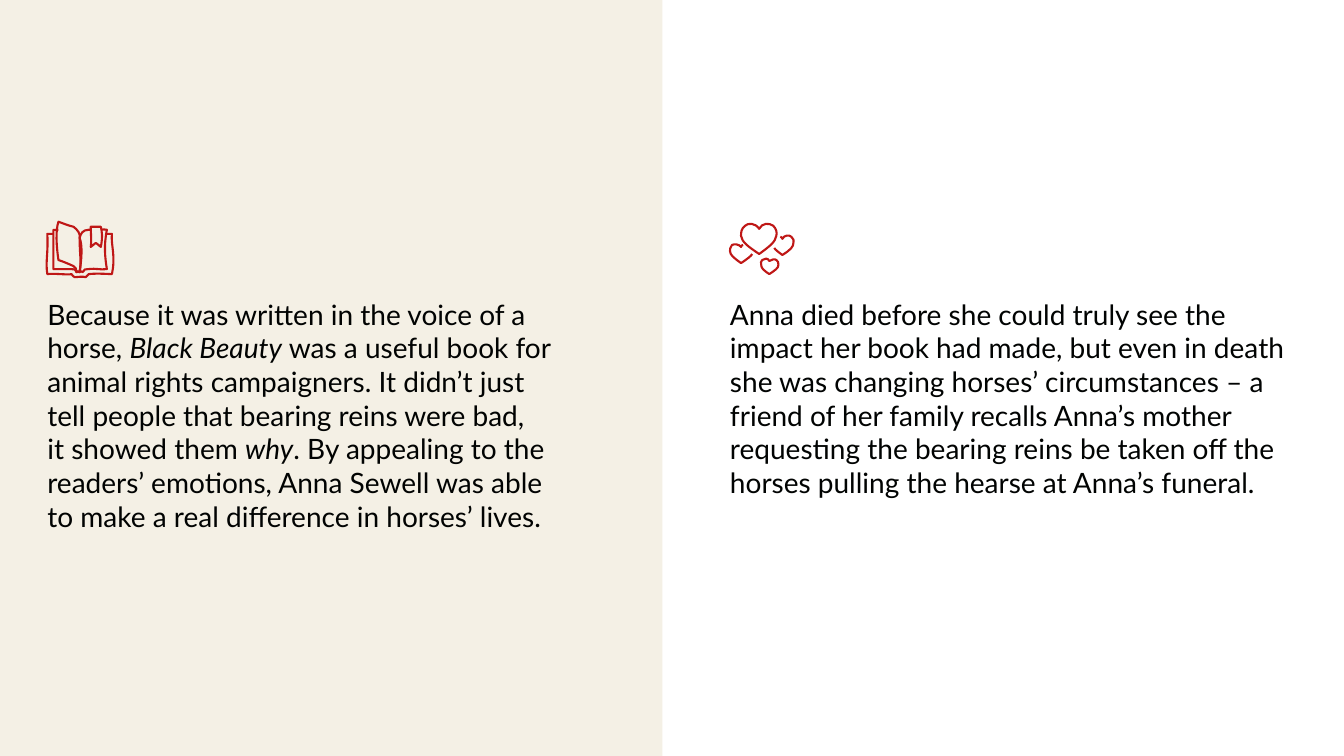
from dataclasses import dataclass

from lxml import etree
from pptx import Presentation
from pptx.dml.color import RGBColor
from pptx.enum.shapes import MSO_SHAPE
from pptx.enum.text import MSO_AUTO_SIZE
from pptx.oxml.ns import qn
from pptx.shapes.group import GroupShape
from pptx.slide import Slide
from pptx.util import Inches, Pt

RECTANGLE = MSO_SHAPE.RECTANGLE
FIT_SHAPE = MSO_AUTO_SIZE.SHAPE_TO_FIT_TEXT

Point = tuple[float, float]


@dataclass(frozen=True)
class Theme:
    panel: RGBColor = RGBColor(0xF4, 0xF0, 0xE5)
    ink: RGBColor = RGBColor(0x01, 0x03, 0x02)
    icon: RGBColor = RGBColor(0xBF, 0x17, 0x16)
    font: str = "Lato"
    body_size: float = 20
    icon_line: float = 1.5


@dataclass(frozen=True)
class Stroke:
    """A start point followed by three points for each cubic curve."""
    points: tuple[Point, ...]
    closed: bool = False


@dataclass(frozen=True)
class Column:
    left: float
    width: float
    height: float
    pieces: tuple[str, ...]  # upright and italic text in turn
    icon: tuple[Stroke, ...]


THEME = Theme()
TEXT_TOP = 2.95

BOOK = (
    Stroke(((1.06, 2.32), (1.07, 2.32), (1.09, 2.32), (1.11, 2.32),
            (1.1, 2.44), (1.15, 2.54), (1.11, 2.72),
            (1.08, 2.72), (0.97, 2.71), (0.88, 2.72),
            (0.87, 2.73), (0.86, 2.74), (0.85, 2.75),
            (0.82, 2.74), (0.77, 2.75), (0.74, 2.75),
            (0.73, 2.74), (0.71, 2.73), (0.71, 2.72),
            (0.68, 2.73), (0.53, 2.71), (0.47, 2.72),
            (0.45, 2.59), (0.48, 2.52), (0.47, 2.32),
            (0.5, 2.32), (0.51, 2.32), (0.53, 2.32))),
    Stroke(((1, 2.28), (1.02, 2.28), (1.04, 2.27), (1.06, 2.28),
            (1.03, 2.44), (1.04, 2.54), (1.06, 2.67),
            (0.99, 2.68), (0.96, 2.66), (0.88, 2.67),
            (0.85, 2.67), (0.83, 2.67), (0.82, 2.7),
            (0.81, 2.69), (0.8, 2.69), (0.79, 2.7),
            (0.81, 2.57), (0.82, 2.44), (0.79, 2.36),
            (0.8, 2.32), (0.82, 2.28), (0.88, 2.28),
            (0.88, 2.28), (0.9, 2.28), (0.9, 2.28))),
    Stroke(((0.79, 2.7), (0.78, 2.7), (0.77, 2.69), (0.76, 2.7),
            (0.75, 2.67), (0.74, 2.67), (0.71, 2.67),
            (0.62, 2.67), (0.58, 2.67), (0.53, 2.67),
            (0.53, 2.48), (0.53, 2.39), (0.53, 2.28),
            (0.54, 2.28), (0.56, 2.28), (0.58, 2.28))),
    Stroke(((0.76, 2.7), (0.77, 2.69), (0.79, 2.69), (0.79, 2.7),
            (0.81, 2.58), (0.79, 2.53), (0.79, 2.36),
            (0.8, 2.32), (0.77, 2.28), (0.73, 2.25),
            (0.68, 2.24), (0.61, 2.21), (0.58, 2.2),
            (0.55, 2.29), (0.56, 2.44), (0.58, 2.58),
            (0.64, 2.6), (0.66, 2.61), (0.73, 2.64),
            (0.75, 2.65), (0.76, 2.67), (0.76, 2.7)), closed=True),
    Stroke(((1, 2.45), (0.98, 2.43), (0.96, 2.42), (0.95, 2.41),
            (0.93, 2.43), (0.93, 2.43), (0.9, 2.45),
            (0.91, 2.41), (0.9, 2.31), (0.9, 2.25),
            (0.94, 2.25), (0.99, 2.25), (1, 2.25),
            (1.01, 2.29), (1.02, 2.35), (1, 2.45)), closed=True),
)

HEARTS = (
    Stroke(((7.37, 2.43), (7.36, 2.43), (7.35, 2.44), (7.35, 2.45),
            (7.33, 2.42), (7.28, 2.42), (7.26, 2.43),
            (7.24, 2.45), (7.24, 2.48), (7.24, 2.49),
            (7.24, 2.53), (7.28, 2.56), (7.35, 2.61),
            (7.41, 2.57), (7.45, 2.54), (7.46, 2.52))),
    Stroke(((7.74, 2.35), (7.75, 2.35), (7.76, 2.36), (7.76, 2.37),
            (7.78, 2.33), (7.83, 2.33), (7.85, 2.35),
            (7.87, 2.37), (7.88, 2.39), (7.87, 2.41),
            (7.87, 2.45), (7.84, 2.48), (7.76, 2.53),
            (7.72, 2.5), (7.69, 2.48), (7.68, 2.46))),
    Stroke(((7.67, 2.24), (7.63, 2.21), (7.56, 2.21), (7.53, 2.27),
            (7.49, 2.21), (7.42, 2.21), (7.39, 2.24),
            (7.35, 2.27), (7.35, 2.31), (7.35, 2.34),
            (7.36, 2.4), (7.41, 2.44), (7.53, 2.52),
            (7.64, 2.44), (7.69, 2.4), (7.7, 2.34),
            (7.71, 2.31), (7.7, 2.27), (7.67, 2.24)), closed=True),
    Stroke(((7.7, 2.58), (7.69, 2.57), (7.65, 2.57), (7.63, 2.59),
            (7.62, 2.56), (7.58, 2.56), (7.56, 2.58),
            (7.55, 2.59), (7.54, 2.61), (7.55, 2.63),
            (7.55, 2.66), (7.57, 2.68), (7.63, 2.72),
            (7.69, 2.68), (7.72, 2.66), (7.72, 2.63),
            (7.72, 2.61), (7.72, 2.59), (7.7, 2.58)), closed=True),
)

COLUMNS = (
    Column(0.47, 5.36, 2.36, (
        "Because it was written in the voice of a horse, ",
        "Black Beauty",
        " was a useful book for animal rights campaigners. It didn’t just \n"
        "tell people that bearing reins were bad, \nit showed them ",
        "why",
        ". By appealing to the readers’ emotions, Anna Sewell was able \n"
        "to make a real difference in horses’ lives.",
    ), BOOK),
    Column(7.24, 5.62, 2.02, (
        "Anna died before she could truly see the impact her book had made, "
        "but even in death she was changing horses’ circumstances – a friend "
        "of her family recalls Anna’s mother requesting the bearing reins be "
        "taken off the horses pulling the hearse at Anna’s funeral.",
    ), HEARTS),
)


def add_text(p, text: str, *, italic: bool = False, size: float = THEME.body_size,
             color: RGBColor = THEME.ink, font: str = THEME.font) -> None:
    """Append text to a paragraph, turning each newline into a line break."""
    for i, line in enumerate(text.split("\n")):
        if i:
            p.add_line_break()
        r = p.add_run()
        r.text = line
        r.font.name = font
        r.font.size = Pt(size)
        r.font.italic = italic
        r.font.color.rgb = color


def bend_lines(outline: etree._Element) -> None:
    """Turn every three line segments of an outline into one cubic curve."""
    lines = list(outline.iter(qn("a:lnTo")))
    for i in range(0, len(lines), 3):
        curve = etree.Element(qn("a:cubicBezTo"))
        lines[i].addprevious(curve)
        for line in lines[i:i + 3]:
            curve.append(line[0])
            line.getparent().remove(line)


def add_stroke(group: GroupShape, stroke: Stroke) -> None:
    start, *controls = [(Inches(x), Inches(y)) for x, y in stroke.points]
    builder = group.shapes.build_freeform(*start)
    builder.add_line_segments(controls, close=stroke.closed)
    sp = builder.convert_to_shape()
    bend_lines(sp.element)
    sp.shadow.inherit = False
    sp.fill.background()
    sp.line.color.rgb = THEME.icon
    sp.line.width = Pt(THEME.icon_line)


def add_column(s: Slide, column: Column) -> None:
    box = s.shapes.add_textbox(Inches(column.left), Inches(TEXT_TOP),
                               Inches(column.width), Inches(column.height))
    tf = box.text_frame
    tf.word_wrap = True
    tf.auto_size = FIT_SHAPE
    tf.margin_left = tf.margin_top = tf.margin_right = tf.margin_bottom = 0
    for i, piece in enumerate(column.pieces):
        add_text(tf.paragraphs[0], piece, italic=i % 2 == 1)
    group = s.shapes.add_group_shape()
    for stroke in column.icon:
        add_stroke(group, stroke)


def main() -> None:
    prs = Presentation()
    prs.slide_width, prs.slide_height = Inches(13.33), Inches(7.5)
    s = prs.slides.add_slide(prs.slide_layouts[6])
    panel = s.shapes.add_shape(RECTANGLE, 0, 0, Inches(6.57), prs.slide_height)
    panel.shadow.inherit = False
    panel.fill.solid()
    panel.fill.fore_color.rgb = THEME.panel
    panel.line.fill.background()
    for column in COLUMNS:
        add_column(s, column)
    prs.save("out.pptx")


if __name__ == "__main__":
    main()
